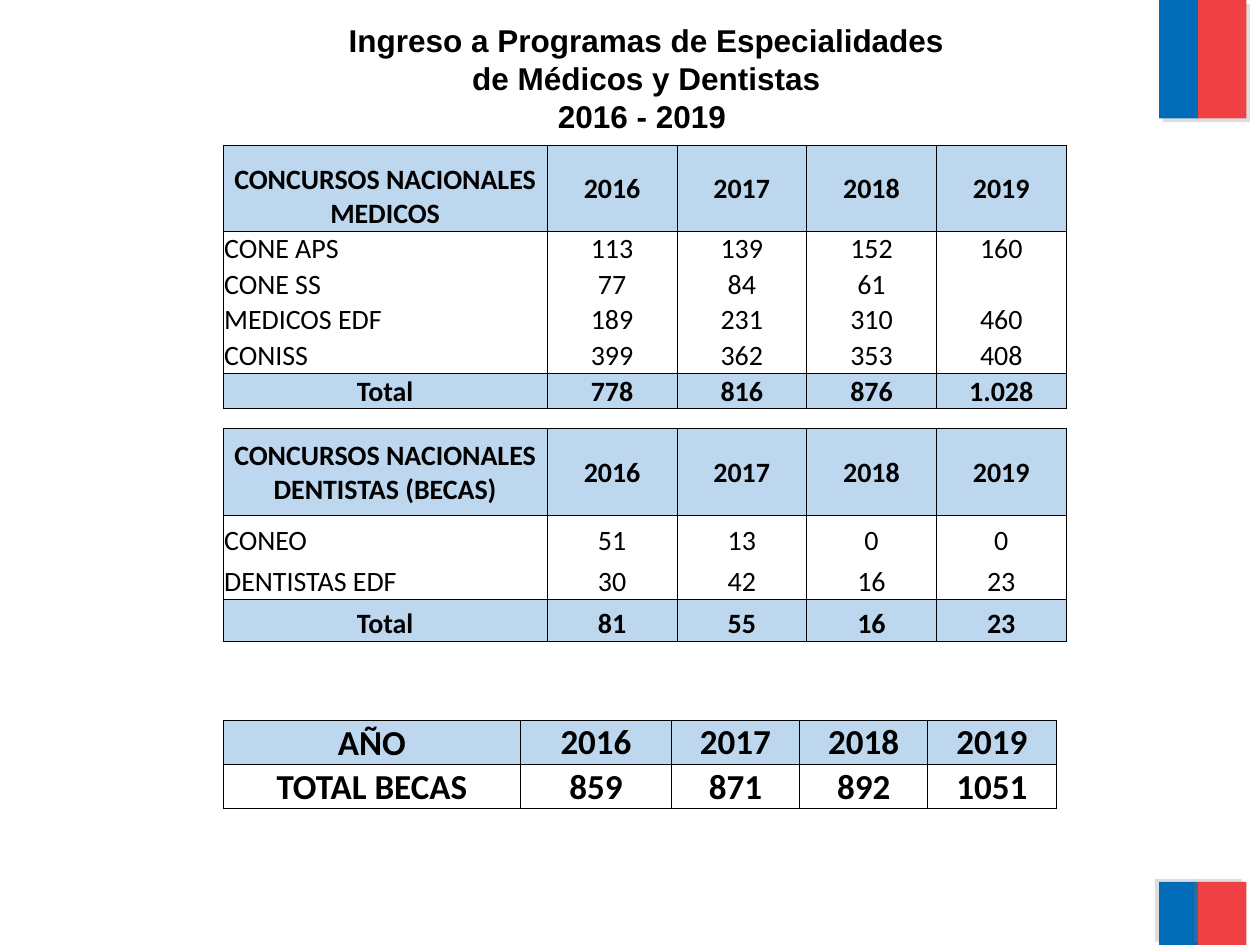
from dataclasses import dataclass

from lxml.etree import SubElement
from pptx import Presentation
from pptx.dml.color import RGBColor
from pptx.enum.shapes import MSO_SHAPE
from pptx.enum.text import MSO_ANCHOR as Anchor
from pptx.enum.text import MSO_AUTO_SIZE as AutoSize
from pptx.enum.text import PP_ALIGN as Align
from pptx.oxml.ns import qn
from pptx.util import Pt

BLACK, HEADER_BLUE = "000000", "BDD7EE"
FLAG_BLUE, FLAG_RED, SHADOW_GREY = "006CB7", "EF4144", "808080"
YEARS = ["2016", "2017", "2018", "2019"]
TABLE_LEFT = 127.5


@dataclass
class FlagBand:
    left: float
    top: float
    width: float
    height: float
    color: str
    shadow_angle: int


@dataclass
class YearTable:
    top: float
    columns: list[float]
    heights: list[float]
    rows: list[list[str]]
    size: float
    shaded_rows: set[int]
    plain_rows: range
    corner_anchor: Anchor


FLAG_BANDS = [
    FlagBand(662.4, -0.7, 22.5, 68.4, FLAG_BLUE, 45),
    FlagBand(684.7, 0, 27.5, 67.7, FLAG_RED, 45),
    FlagBand(662.4, 504, 22.5, 36, FLAG_BLUE, 215),
    FlagBand(684.7, 504, 27.5, 36, FLAG_RED, 215),
]

CONTEST_COLUMNS = [185.2] + [74.15] * 4

TABLES = [
    YearTable(
        244.8, CONTEST_COLUMNS, [50] + [23.9] * 3,
        [
            ["CONCURSOS NACIONALES DENTISTAS (BECAS)", *YEARS],
            ["CONEO", "51", "13", "0", "0"],
            ["DENTISTAS EDF", "30", "42", "16", "23"],
            ["Total", "81", "55", "16", "23"],
        ],
        16, {0, 3}, range(1, 3), Anchor.MIDDLE,
    ),
    YearTable(
        83, CONTEST_COLUMNS, [49] + [20.3] * 5,
        [
            ["CONCURSOS NACIONALES MEDICOS", *YEARS],
            ["CONE APS", "113", "139", "152", "160"],
            ["CONE SS", "77", "84", "61", ""],
            ["MEDICOS EDF", "189", "231", "310", "460"],
            ["CONISS", "399", "362", "353", "408"],
            ["Total", "778", "816", "876", "1.028"],
        ],
        16, {0, 5}, range(1, 5), Anchor.BOTTOM,
    ),
    YearTable(
        411.6, [170, 86.2] + [73.3] * 3, [25.3] * 2,
        [
            ["AÑO", *YEARS],
            ["TOTAL BECAS", "859", "871", "892", "1051"],
        ],
        20, {0}, range(0), Anchor.BOTTOM,
    ),
]


def color(value: str) -> RGBColor:
    return RGBColor.from_string(value)


def style_paragraph(paragraph, name: str, size: float, bold: bool, align: Align) -> None:
    font = paragraph.font
    font.name, font.size, font.bold = name, Pt(size), bold
    font.color.rgb = color(BLACK)
    paragraph.alignment = align


def draw_flag_band(slide, band: FlagBand) -> None:
    shape = slide.shapes.add_shape(
        MSO_SHAPE.RECTANGLE, Pt(band.left), Pt(band.top), Pt(band.width), Pt(band.height)
    )
    shape.fill.solid()
    shape.fill.fore_color.rgb = color(band.color)
    shape.line.fill.background()
    shape.shadow.inherit = False
    effects = shape._element.spPr.find(qn("a:effectLst"))
    shadow = SubElement(
        effects, qn("a:outerShdw"), dist=str(Pt(3)),
        dir=str(band.shadow_angle * 60000), algn="ctr", rotWithShape="0",
    )
    shade = SubElement(shadow, qn("a:srgbClr"), val=SHADOW_GREY)
    SubElement(shade, qn("a:alpha"), val="25000")


def draw_borders(cell, visible_sides: str) -> None:
    properties = cell._tc.get_or_add_tcPr()
    for side in "LRTB":
        line = SubElement(properties, qn(f"a:ln{side}"), w=str(Pt(0.5)))
        if side in visible_sides:
            fill = SubElement(line, qn("a:solidFill"))
            SubElement(fill, qn("a:srgbClr"), val=BLACK)
        else:
            SubElement(line, qn("a:noFill"))


def visible_sides(plain_rows: range, row: int) -> str:
    if row not in plain_rows:
        return "LRTB"
    top = "T" if row == plain_rows[0] else ""
    bottom = "B" if row == plain_rows[-1] else ""
    return "LR" + top + bottom


def draw_table(slide, data: YearTable) -> None:
    table = slide.shapes.add_table(
        len(data.rows), len(data.columns), Pt(TABLE_LEFT), Pt(data.top),
        Pt(sum(data.columns)), Pt(sum(data.heights)),
    ).table
    table.first_row = table.horz_banding = False
    for column, width in zip(table.columns, data.columns):
        column.width = Pt(width)
    for row, (texts, height) in enumerate(zip(data.rows, data.heights)):
        table.rows[row].height = Pt(height)
        plain = row in data.plain_rows
        for column, text in enumerate(texts):
            cell = table.cell(row, column)
            cell.margin_left = cell.margin_right = cell.margin_top = Pt(0.6)
            cell.margin_bottom = 0
            if row > 0:
                cell.vertical_anchor = Anchor.BOTTOM
            else:
                cell.vertical_anchor = Anchor.MIDDLE if column else data.corner_anchor
            draw_borders(cell, visible_sides(data.plain_rows, row))
            if row in data.shaded_rows:
                cell.fill.solid()
                cell.fill.fore_color.rgb = color(HEADER_BLUE)
            else:
                cell.fill.background()
            cell.text = text
            align = Align.LEFT if plain and column == 0 else Align.CENTER
            style_paragraph(cell.text_frame.paragraphs[0], "Calibri", data.size, not plain, align)


def draw_title(slide) -> None:
    frame = slide.shapes.add_textbox(Pt(180), Pt(8.6), Pt(378.7), Pt(72.7)).text_frame
    frame.word_wrap = True
    frame.auto_size = AutoSize.SHAPE_TO_FIT_TEXT
    frame.text = "Ingreso a Programas de Especialidades de Médicos y Dentistas\n2016 - 2019 "
    for paragraph in frame.paragraphs:
        style_paragraph(paragraph, "Arial", 18, True, Align.CENTER)


def main() -> None:
    presentation = Presentation()
    presentation.slide_width, presentation.slide_height = Pt(720), Pt(540)
    slide = presentation.slides.add_slide(presentation.slide_layouts[6])
    for band in FLAG_BANDS:
        draw_flag_band(slide, band)
    for table in TABLES:
        draw_table(slide, table)
    draw_title(slide)
    presentation.save("out.pptx")


if __name__ == "__main__":
    main()
